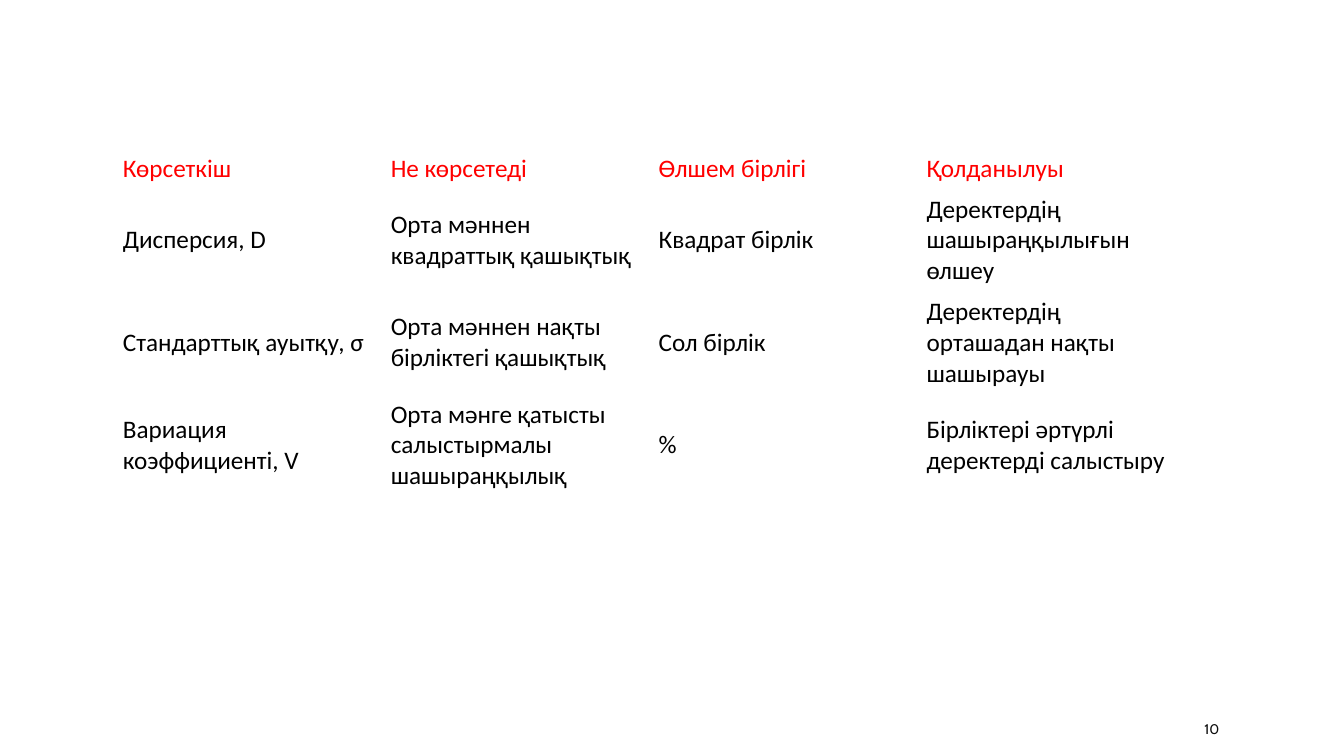
from pptx import Presentation
from pptx.dml.color import RGBColor
from pptx.enum.text import MSO_ANCHOR
from pptx.util import Pt

MIDDLE = MSO_ANCHOR.MIDDLE
COLORS = {"header": "FF0000", "body": "000000", "number": "0D0D0D"}
COLUMN_WIDTH = 191.35
HEADER_HEIGHT = 29.2
BODY_HEIGHT = 73.2
ROWS = [
    ["Көрсеткіш", "Не көрсетеді", "Өлшем бірлігі", "Қолданылуы"],
    ["Дисперсия, D", "Орта мәннен квадраттық қашықтық",
     "Квадрат бірлік", "Деректердің шашыраңқылығын өлшеу"],
    ["Стандарттық ауытқу, σ", "Орта мәннен нақты бірліктегі қашықтық",
     "Сол бірлік", "Деректердің орташадан нақты шашырауы"],
    ["Вариация коэффициенті, V", "Орта мәнге қатысты салыстырмалы шашыраңқылық",
     "%", "Бірліктері әртүрлі деректерді салыстыру"],
]


def write_text(tf, text, *, size, font, color):
    tf.word_wrap = True
    r = tf.paragraphs[0].add_run()
    r.text = text
    r.font.size = Pt(size)
    r.font.name = font
    r.font.color.rgb = RGBColor.from_string(COLORS[color])


def add_plain_table(s, rows, left, top):
    """Add a table without fills or banding, its first row in the header colour."""
    heights = [HEADER_HEIGHT] + [BODY_HEIGHT] * (len(rows) - 1)
    columns = len(rows[0])
    table = s.shapes.add_table(len(rows), columns, Pt(left), Pt(top),
                               Pt(columns * COLUMN_WIDTH), Pt(sum(heights))).table
    table.first_row = False
    table.horz_banding = False
    for i, (texts, height) in enumerate(zip(rows, heights)):
        table.rows[i].height = Pt(height)
        for j, text in enumerate(texts):
            cell = table.cell(i, j)
            cell.fill.background()
            cell.vertical_anchor = MIDDLE
            write_text(cell.text_frame, text, size=18, font="Calibri",
                       color="body" if i else "header")


def add_slide_number(s, number):
    tf = s.shapes.add_textbox(Pt(853.2), Pt(509.8), Pt(76.3), Pt(21.6)).text_frame
    tf.vertical_anchor = MIDDLE
    write_text(tf, number, size=10, font="Cabin", color="number")


def main():
    prs = Presentation()
    prs.slide_width = Pt(960)
    prs.slide_height = Pt(540)
    s = prs.slides.add_slide(prs.slide_layouts[6])
    add_slide_number(s, "10")
    add_plain_table(s, ROWS, left=80.6, top=105.8)
    prs.save("out.pptx")


if __name__ == "__main__":
    main()
